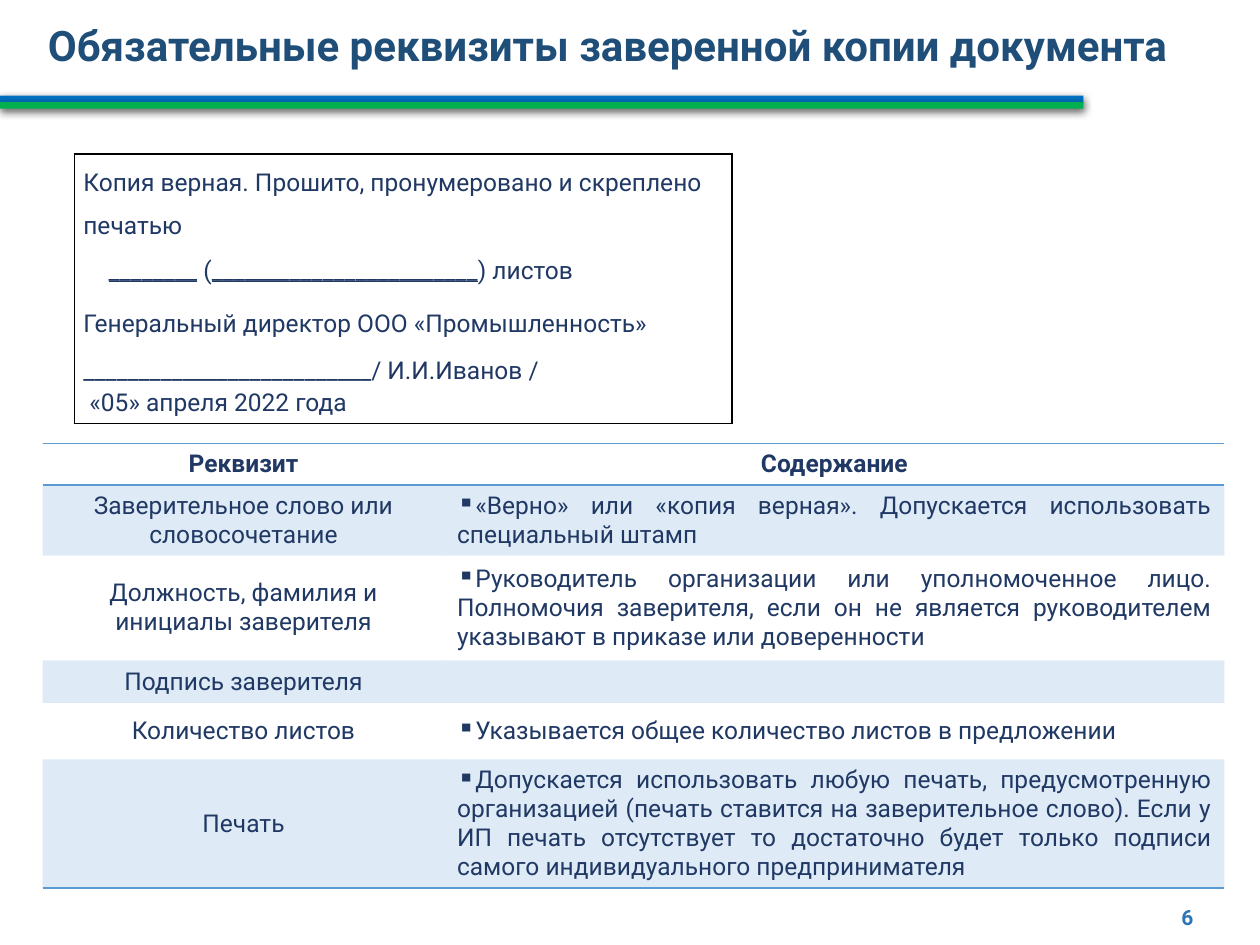
from dataclasses import dataclass

import pptx
import pptx.dml.color
import pptx.enum.shapes
import pptx.enum.text
import pptx.oxml
import pptx.oxml.ns
import pptx.util
from lxml import etree
from pptx.util import Cm

ALIGN = pptx.enum.text.PP_ALIGN
ANCHOR = pptx.enum.text.MSO_ANCHOR
NO_STYLE = "{2D5ABB26-0587-4C30-8999-92F81FD0307C}"


@dataclass(frozen=True)
class Theme:
    font: str = "Roboto"
    title: str = "1F4E79"
    text: str = "203864"
    number: str = "2E75B6"
    blue: str = "0070C0"
    green: str = "00B050"
    accent: str = "5B9BD5"
    white: str = "FFFFFF"
    black: str = "000000"
    title_size: int = 24
    text_size: int = 14
    number_size: int = 12


THEME = Theme()

STAMP_ROWS = [  # height in cm, runs as (text, underlined), paragraph format
    (1.6, [("Копия верная. Прошито, пронумеровано и скреплено печатью", False)],
     {"spacing": 1.5}),
    (1.07, [("________", True), (" (", False), ("________________________", True),
            (") листов", False)], {"spacing": 1.5, "indent": 0.51}),
    (0.94, [("Генеральный директор ООО «Промышленность»", False)], {"spacing": 1.5}),
    (0.94, [("__________________________/ И.И.Иванов /", False)], {"spacing": 1.5}),
    (0.71, [(" «05» апреля 2022 года", False)], {}),
]

REQUISITE_ROWS = [  # height in cm, requisite, content
    (0.84, "Реквизит", "Содержание"),
    (1.42, "Заверительное слово или словосочетание",
     "«Верно» или «копия верная». Допускается использовать специальный штамп"),
    (2.11, "Должность, фамилия и инициалы заверителя",
     "Руководитель организации или уполномоченное лицо. Полномочия заверителя, "
     "если он не является руководителем указывают в приказе или доверенности"),
    (0.84, "Подпись заверителя", ""),
    (1.14, "Количество листов", "Указывается общее количество листов в предложении"),
    (2.59, "Печать",
     "Допускается использовать любую печать, предусмотренную организацией (печать "
     "ставится на заверительное слово). Если у ИП печать отсутствует то достаточно "
     "будет только подписи самого индивидуального предпринимателя"),
]


def rgb(color):
    return pptx.dml.color.RGBColor.from_string(color)


def add_child(parent, tag, **attributes):
    child = etree.SubElement(parent, pptx.oxml.ns.qn(tag))
    for name, value in attributes.items():
        child.set(name, str(value))
    return child


def write_text(frame, runs, size=THEME.text_size, color=THEME.text, bold=False,
               align=ALIGN.LEFT, spacing=None, indent=None, bullet=None):
    """Fill the first paragraph with a string or with (text, underlined) runs."""
    paragraph = frame.paragraphs[0]
    properties = paragraph._p.get_or_add_pPr()
    if indent is not None:
        properties.set("marL", "0")
        properties.set("indent", str(Cm(indent)))
    if bullet:
        add_child(properties, "a:buChar", char=bullet)
    paragraph.alignment = align
    if spacing:
        paragraph.line_spacing = spacing
    if not runs:  # an empty cell keeps the row's type size
        paragraph._p.get_or_add_endParaRPr().set("sz", str(size * 100))
        return
    for text, underlined in [(runs, False)] if isinstance(runs, str) else runs:
        run = paragraph.add_run()
        run.text = text
        run.font.name = THEME.font
        run.font.size = pptx.util.Pt(size)
        run.font.bold = bold
        run.font.underline = underlined
        run.font.color.rgb = rgb(color)


def add_title(slide, text):
    title = slide.shapes.title
    title.left, title.top, title.width, title.height = (
        Cm(0.71), Cm(0.03), Cm(23.98), Cm(1.52))
    frame = title.text_frame
    frame.auto_size = pptx.enum.text.MSO_AUTO_SIZE.NONE
    frame.vertical_anchor = ANCHOR.BOTTOM
    write_text(frame, text, size=THEME.title_size, color=THEME.title, bold=True,
               spacing=0.9)


def add_bar(group, top, height, color):
    bar = group.shapes.add_shape(pptx.enum.shapes.MSO_SHAPE.RECTANGLE,
                                 0, Cm(top), Cm(21.84), Cm(height))
    bar.fill.solid()
    bar.fill.fore_color.rgb = rgb(color)
    bar.line.fill.background()
    effects = add_child(bar._element.spPr, "a:effectLst")
    shadow = add_child(effects, "a:outerShdw", blurRad=pptx.util.Pt(4.5),
                       dist=pptx.util.Pt(1.5), dir=5400000, rotWithShape=0)
    shade = add_child(shadow, "a:srgbClr", val=THEME.black)
    add_child(shade, "a:alpha", val=63000)


def add_plain_table(slide, left, top, widths, heights):
    frame = slide.shapes.add_table(len(heights), len(widths), Cm(left), Cm(top),
                                   Cm(sum(widths)), Cm(sum(heights)))
    table = frame.table
    table.first_row = table.horz_banding = False
    table._tbl.tblPr.find(pptx.oxml.ns.qn("a:tableStyleId")).text = NO_STYLE
    for column, width in zip(table.columns, widths):
        column.width = Cm(width)
    for row, height in zip(table.rows, heights):
        row.height = Cm(height)
    return table


def format_cell(cell, sides, line_color, fill=None, opacity=100):
    """Draw borders on the sides (in the order L, R, T, B), then fill the cell."""
    properties = cell._tc.get_or_add_tcPr()
    for side in sides:
        line = add_child(properties, f"a:ln{side}", w=pptx.util.Pt(1))
        add_child(add_child(line, "a:solidFill"), "a:srgbClr", val=line_color)
    if fill is None:
        cell.fill.background()
        return
    cell.fill.solid()
    cell.fill.fore_color.rgb = rgb(fill)
    if opacity < 100:
        color = properties.find(".//" + pptx.oxml.ns.qn("a:solidFill") + "[last()]")
        color = properties.findall(pptx.oxml.ns.qn("a:solidFill"))[-1][0]
        add_child(color, "a:alpha", val=opacity * 1000)


def add_requisites(slide):
    heights = [row[0] for row in REQUISITE_ROWS]
    table = add_plain_table(slide, 0.86, 8.94, [8.1, 15.72], heights)
    last = len(heights) - 1
    for index, (_, *texts) in enumerate(REQUISITE_ROWS):
        header = index == 0
        sides = "TB" if header else "B" if index == last else ""
        band = THEME.accent if index % 2 else None
        for column, text in enumerate(texts):
            cell = table.cell(index, column)
            cell.vertical_anchor = ANCHOR.MIDDLE
            format_cell(cell, sides, THEME.accent, band, opacity=20)
            if column == 0 or header:
                write_text(cell.text_frame, text, bold=header, align=ALIGN.CENTER)
            else:
                write_text(cell.text_frame, text, align=ALIGN.JUSTIFY,
                           indent=-0.79, bullet="▪")


def add_stamp(slide):
    heights = [row[0] for row in STAMP_ROWS]
    table = add_plain_table(slide, 1.5, 3.1, [13.26], heights)
    last = len(heights) - 1
    for index, (_, runs, layout) in enumerate(STAMP_ROWS):
        cell = table.cell(index, 0)
        cell.margin_left = cell.margin_right = Cm(0.18)
        cell.margin_top = cell.margin_bottom = 0
        sides = "LR" + ("T" if index == 0 else "B" if index == last else "")
        format_cell(cell, sides, THEME.black, THEME.white)
        write_text(cell.text_frame, runs, **layout)


def add_page_number(slide, number):
    box = slide.shapes.add_textbox(Cm(18.59), Cm(17.98), Cm(5.72), Cm(1.02))
    box.text_frame.word_wrap = True
    box.text_frame.vertical_anchor = ANCHOR.MIDDLE
    write_text(box.text_frame, number, size=THEME.number_size, color=THEME.number,
               bold=True, align=ALIGN.RIGHT)


def main():
    presentation = pptx.Presentation()
    presentation.slide_width, presentation.slide_height = Cm(25.4), Cm(19.05)
    slide = presentation.slides.add_slide(presentation.slide_layouts[5])

    # Title and the two-colour rule below it
    add_title(slide, "Обязательные реквизиты заверенной копии документа")
    rule = slide.shapes.add_group_shape()
    add_bar(rule, 1.93, 0.15, THEME.blue)
    add_bar(rule, 2.06, 0.13, THEME.green)

    # Table of requisites, page number and sample stamp
    add_requisites(slide)
    add_page_number(slide, "6")
    add_stamp(slide)

    presentation.save("out.pptx")


if __name__ == "__main__":
    main()
